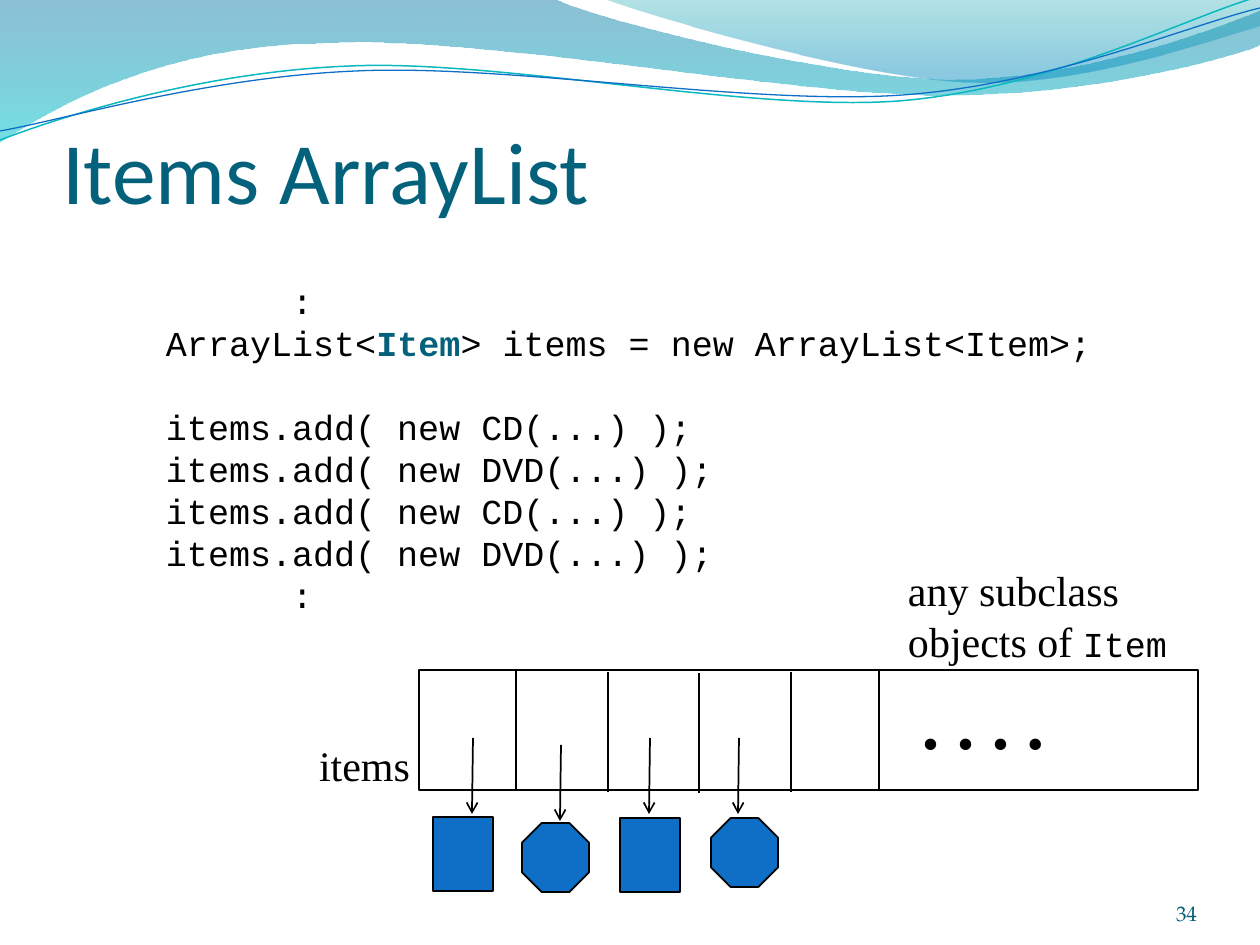
from dataclasses import dataclass

import pptx
import pptx.dml.color
import pptx.enum.shapes
import pptx.enum.text
import pptx.oxml
import pptx.oxml.ns
import pptx.util

EMU_PER_PX = 914400 / 126
COLORS = {
    "ink": "000000",
    "title": "04617B",
    "number": "045D75",
    "object": "0F6FC6",
    "teal": "0AB8BF",
    "deep": "0074A1",
    "aqua": "00C6CF",
    "sea": "00A1A9",
    "sky": "008BBF",
}
SERIF = "Times New Roman"
MONO = "Courier New"
PRESET = pptx.enum.shapes.MSO_SHAPE
ALIGN = pptx.enum.text.PP_ALIGN
ANCHOR = pptx.enum.text.MSO_ANCHOR


@dataclass(frozen=True)
class Run:
    text: str
    size: int
    font: str
    color: str = "ink"
    bold: bool = False


@dataclass(frozen=True)
class Line:
    runs: tuple[Run, ...]
    indent: int = 0
    before: int = 0
    spacing: int | None = None
    align: ALIGN = ALIGN.LEFT


@dataclass(frozen=True)
class Label:
    box: tuple[int, int, int, int]
    lines: tuple[Line, ...]
    inset: tuple[int, int] = (13, 6)
    wrap: bool = False
    anchor: ANCHOR = ANCHOR.TOP


@dataclass(frozen=True)
class Stop:
    position: float
    color: str
    alpha: int


@dataclass(frozen=True)
class Wave:
    start: tuple[int, int]
    segments: tuple[tuple[int, ...], ...]
    stops: tuple[Stop, ...] = ()
    stroke: str = ""
    weight: float = 0


@dataclass(frozen=True)
class Item:
    preset: PRESET
    box: tuple[int, int, int, int]
    arrow_x: int
    arrow_top: int


def px(length: float) -> int:
    return round(length * EMU_PER_PX)


def rgb(name: str) -> pptx.dml.color.RGBColor:
    return pptx.dml.color.RGBColor.from_string(COLORS[name])


def add_run(paragraph, run: Run) -> None:
    piece = paragraph.add_run()
    piece.text = run.text
    piece.font.size = pptx.util.Pt(run.size)
    piece.font.name = run.font
    piece.font.bold = run.bold
    piece.font.color.rgb = rgb(run.color)


def fill_frame(frame, label: Label) -> None:
    frame.auto_size = pptx.enum.text.MSO_AUTO_SIZE.NONE
    frame.word_wrap = label.wrap
    frame.vertical_anchor = label.anchor
    frame.margin_left = frame.margin_right = px(label.inset[0])
    frame.margin_top = frame.margin_bottom = px(label.inset[1])
    for index, line in enumerate(label.lines):
        paragraph = frame.add_paragraph() if index else frame.paragraphs[0]
        paragraph.alignment = line.align
        paragraph.space_before = pptx.util.Pt(line.before)
        if line.spacing:
            paragraph.line_spacing = pptx.util.Pt(line.spacing)
        if line.indent:
            paragraph._p.get_or_add_pPr().set("marL", str(px(line.indent)))
        for run in line.runs:
            add_run(paragraph, run)


def add_label(slide, label: Label) -> None:
    fill_frame(slide.shapes.add_textbox(*map(px, label.box)).text_frame, label)


def bend(band, segments: tuple[tuple[int, ...], ...]) -> None:
    corners = list(band.element.spPr.iter(pptx.oxml.ns.qn("a:lnTo")))
    for segment in segments:
        controls, corners = corners[: len(segment) // 2], corners[len(segment) // 2:]
        if len(controls) == 3:
            curve = pptx.oxml.parse_xml(f'<a:cubicBezTo {pptx.oxml.ns.nsdecls("a")}/>')
            controls[0].addprevious(curve)
            for control in controls:
                curve.append(control[0])
                control.getparent().remove(control)


def add_wave(slide, wave: Wave) -> None:
    builder = slide.shapes.build_freeform(*map(px, wave.start))
    points = [(px(x), px(y)) for segment in wave.segments for x, y in zip(segment[::2], segment[1::2])]
    builder.add_line_segments(points, close=bool(wave.stops))
    band = builder.convert_to_shape()
    bend(band, wave.segments)
    band.shadow.inherit = False
    if wave.stroke:
        band.fill.background()
        band.line.color.rgb = rgb(wave.stroke)
        band.line.width = pptx.util.Pt(wave.weight)
        return
    band.line.fill.background()
    band.fill.gradient()
    band.fill.gradient_angle = 270
    for target, stop in zip(band.fill.gradient_stops, wave.stops):
        target.position = stop.position
        target.color.rgb = rgb(stop.color)
    tints = band.element.spPr.iter(pptx.oxml.ns.qn("a:srgbClr"))
    for tint, stop in zip(list(tints), wave.stops):
        alpha = pptx.oxml.parse_xml(f'<a:alpha {pptx.oxml.ns.nsdecls("a")} val="{stop.alpha * 1000}"/>')
        tint.append(alpha)


def add_figure(slide, preset: PRESET, box: tuple[int, int, int, int], fill: str = "") -> None:
    figure = slide.shapes.add_shape(preset, *map(px, box))
    figure.shadow.inherit = False
    if fill:
        figure.fill.solid()
        figure.fill.fore_color.rgb = rgb(fill)
    else:
        figure.fill.background()
    figure.line.color.rgb = rgb("ink")
    figure.line.width = pptx.util.Pt(1)


def add_stroke(slide, ends: tuple[int, int, int, int], arrow: bool = False) -> None:
    stroke = slide.shapes.add_connector(pptx.enum.shapes.MSO_CONNECTOR.STRAIGHT, *map(px, ends))
    stroke.line.color.rgb = rgb("ink")
    stroke.line.width = pptx.util.Pt(1)
    namespace = pptx.oxml.ns.nsdecls("a")
    if arrow:
        stroke.line._get_or_add_ln().append(pptx.oxml.parse_xml(f'<a:tailEnd {namespace} type="arrow"/>'))
    stroke._element.spPr.append(pptx.oxml.parse_xml(f"<a:effectLst {namespace}/>"))


def code(*runs: Run, indent: int = 37, before: int = 0) -> Line:
    return Line(runs, indent, before, spacing=24)


def mono(text: str) -> Run:
    return Run(text, 20, MONO)


WAVES = (
    Wave((0, 0), ((554, -1), (600, 21, 837, 79, 955, 79), (1074, 79, 1207, 33, 1260, 11), (1261, 45),
                  (1239, 55, 1096, 96, 940, 95), (784, 95, 481, 35, 324, 43), (163, 45, 58, 105, -1, 142)),
         stops=(Stop(0, "deep", 45), Stop(1, "aqua", 55))),
    Wave((604, -1), ((641, 14, 859, 78, 969, 82), (1079, 87, 1211, 40, 1260, 26), (1260, 0)),
         stops=(Stop(0, "sea", 30), Stop(0.8, "sky", 45))),
    Wave((0, 140), ((60, 117, 199, 72, 349, 66), (498, 59, 747, 112, 898, 101), (1050, 89, 1182, 19, 1257, -3)),
         stroke="teal", weight=0.85),
    Wave((0, 131), ((59, 121, 207, 77, 357, 71), (508, 64, 752, 106, 903, 95), (1053, 84, 1186, 26, 1260, 8)),
         stroke="object", weight=0.75),
)
TITLE = Label((62, 64, 1134, 158), (Line((Run("Items ArrayList", 50, "Calibri", "title"),)),),
              (0, 0), True, ANCHOR.BOTTOM)
ADDED = ("CD", "DVD", "CD", "DVD")
LISTING = Label((116, 273, 1050, 357), (
    code(mono(":"), indent=163),
    code(mono("ArrayList<"), Run("Item", 20, MONO, "title", True), mono("> items = new ArrayList<Item>;")),
    *(code(mono(f"items.add( new {kind}(...) );"), before=0 if index else 24) for index, kind in enumerate(ADDED)),
    code(mono(":"), indent=163),
), wrap=True)
LABELS = (
    LISTING,
    Label((909, 674, 282, 98), (Line((Run(". . . .", 40, SERIF, bold=True),)),), wrap=True),
    Label((306, 734, 117, 63), (Line((Run("items", 24, SERIF),)),)),
    Label((895, 559, 286, 115), (Line((Run("any subclass", 24, SERIF),)),
                                 Line((Run("objects of ", 24, SERIF), mono("Item"))))),
    Label((1092, 876, 105, 50), (Line((Run("34", 12, "TeX Gyre Pagella", "number"),), align=ALIGN.RIGHT),),
          (0, 0), True, ANCHOR.BOTTOM),
)
ARRAY_BOX = (419, 670, 779, 120)
DIVIDERS = ((516, 670), (608, 672), (699, 673), (791, 672), (879, 671))
ITEMS = (
    Item(PRESET.RECTANGLE, (433, 817, 60, 74), 473, 738),
    Item(PRESET.OCTAGON, (522, 823, 67, 69), 561, 745),
    Item(PRESET.RECTANGLE, (620, 818, 60, 74), 650, 738),
    Item(PRESET.OCTAGON, (711, 818, 67, 69), 739, 738),
)


def main() -> None:
    deck = pptx.Presentation()
    deck.slide_width, deck.slide_height = px(1260), px(945)
    slide = deck.slides.add_slide(deck.slide_layouts[5])
    for wave in WAVES:
        add_wave(slide, wave)
    heading = slide.shapes.title
    heading.left, heading.top, heading.width, heading.height = map(px, TITLE.box)
    fill_frame(heading.text_frame, TITLE)
    add_figure(slide, PRESET.RECTANGLE, ARRAY_BOX)
    for x, top in DIVIDERS:
        add_stroke(slide, (x, top, x, top + 120))
    for item in ITEMS:
        add_figure(slide, item.preset, item.box, "object")
        add_stroke(slide, (item.arrow_x, item.arrow_top, item.arrow_x - 1, item.arrow_top + 76), arrow=True)
    for label in LABELS:
        add_label(slide, label)
    deck.save("out.pptx")


if __name__ == "__main__":
    main()
